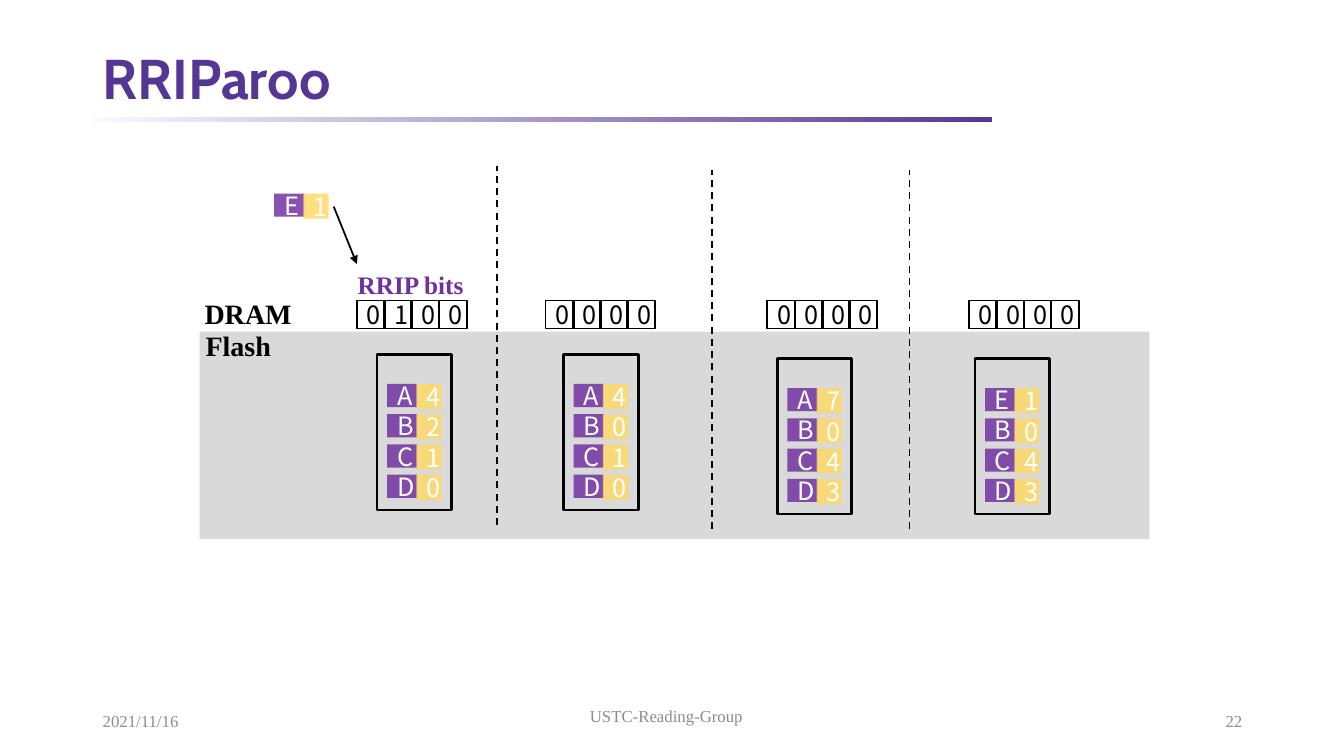
from lxml import etree
from pptx import Presentation
from pptx.dml.color import RGBColor
from pptx.enum.dml import MSO_LINE
from pptx.enum.shapes import MSO_CONNECTOR, MSO_SHAPE
from pptx.enum.text import MSO_ANCHOR, PP_ALIGN
from pptx.oxml.ns import qn
from pptx.util import Inches, Pt

RECT = MSO_SHAPE.RECTANGLE
STRAIGHT = MSO_CONNECTOR.STRAIGHT
DASH = MSO_LINE.DASH
LEFT, CENTER, RIGHT = PP_ALIGN.LEFT, PP_ALIGN.CENTER, PP_ALIGN.RIGHT
TOP, MIDDLE = MSO_ANCHOR.TOP, MSO_ANCHOR.MIDDLE

BLACK = RGBColor(0x00, 0x00, 0x00)
WHITE = RGBColor(0xFF, 0xFF, 0xFF)
GRAY = RGBColor(0x8C, 0x8C, 0x8C)
SILVER = RGBColor(0xD9, 0xD9, 0xD9)
PURPLE = RGBColor(0x70, 0x30, 0xA0)
YELLOW = RGBColor(0xFF, 0xD9, 0x66)
INDIGO = RGBColor(0x54, 0x37, 0x95)
PALE = RGBColor(0xF7, 0xFA, 0xFD)

SERIF = "Times New Roman"
SANS = "Noto Sans CJK SC"
HEAD = "Cabin"


def write(frame, text, font=SERIF, size=18, color=BLACK, bold=False,
          align=LEFT, anchor=TOP, wrap=True, spacing=None):
    frame.word_wrap = wrap
    frame.vertical_anchor = anchor
    para = frame.paragraphs[0]
    para.alignment = align
    para.line_spacing = spacing
    run = para.add_run()
    run.text = text
    run.font.name = font
    run.font.size = Pt(size)
    run.font.bold = bold
    run.font.color.rgb = color


class Board:
    thin, thick = 1.25, 2
    pitch, row = 0.27, 0.3

    def __init__(self, slide):
        self.shapes = slide.shapes

    def label(self, text, x, y, w, h, **style):
        box = self.shapes.add_textbox(Inches(x), Inches(y), Inches(w), Inches(h))
        write(box.text_frame, text, **style)

    def rect(self, x, y, w, h, fill=None, alpha=None, line=None):
        box = self.shapes.add_shape(RECT, Inches(x), Inches(y), Inches(w), Inches(h))
        box.shadow.inherit = False
        if fill is None:
            box.fill.background()
        else:
            box.fill.solid()
            box.fill.fore_color.rgb = fill
        if alpha:
            color = box.fill._xPr.find(qn("a:solidFill"))[0]
            etree.SubElement(color, qn("a:alpha"), val=str(alpha * 1000))
        if line:
            box.line.color.rgb = BLACK
            box.line.width = Pt(line)
        else:
            box.line.fill.background()
        return box

    def rule(self, x, y, w, h):
        bar = self.rect(x, y, w, h)
        bar.fill.gradient()
        bar.fill.gradient_angle = 0
        for stop, color in zip(bar.fill.gradient_stops, (PALE, INDIGO)):
            stop.color.rgb = color

    def cell(self, text, x, y, w, h, color=WHITE, **style):
        box = self.rect(x, y, w, h, **style)
        write(box.text_frame, text, font=SANS, color=color, align=CENTER, anchor=MIDDLE)

    def item(self, key, value, x, y):
        self.cell(key, x, y, 0.3, 0.23, fill=PURPLE, alpha=83)
        self.cell(value, x + 0.29, y, 0.25, 0.25, fill=YELLOW, alpha=83)

    def bits(self, text, x, y):
        for i, bit in enumerate(text):
            self.cell(bit, x + i * self.pitch, y, 0.28, 0.28, color=BLACK, line=self.thin)

    def page(self, items, x, y):
        self.rect(x, y, 0.74, 1.54, line=self.thick)
        for i, (key, value) in enumerate(items):
            self.item(key, value, x + 0.1, y + 0.29 + i * self.row)

    def link(self, x1, y1, x2, y2, dash=None, arrow=False):
        line = self.shapes.add_connector(
            STRAIGHT, Inches(x1), Inches(y1), Inches(x2), Inches(y2))
        line.line.color.rgb = BLACK
        line.line.width = Pt(self.thin)
        if dash:
            line.line.dash_style = dash
        if arrow:
            etree.SubElement(line.line._get_or_add_ln(), qn("a:tailEnd"), type="triangle")
        etree.SubElement(line._element.spPr, qn("a:effectLst"))


def main():
    deck = Presentation()
    deck.slide_width, deck.slide_height = Inches(13.33), Inches(7.5)
    board = Board(deck.slides.add_slide(deck.slide_layouts[6]))

    board.rule(0.92, 1.16, 8.92, 0.05)
    board.label("RRIParoo", 0.92, 0.43, 11.5, 0.75, font=HEAD, size=40,
                color=INDIGO, bold=True, anchor=MIDDLE, spacing=0.9)
    for text, x, y, w, align in (
            ("2021/11/16", 0.92, 6.95, 3, LEFT),
            ("USTC-Reading-Group", 4.36, 6.9, 4.5, CENTER),
            ("22", 9.42, 6.95, 3, RIGHT)):
        board.label(text, x, y, w, 0.4, size=12, color=GRAY, align=align, anchor=MIDDLE)

    board.rect(1.98, 3.29, 9.42, 2.06, fill=SILVER)
    board.label("DRAM", 1.93, 2.89, 1.08, 0.44, size=20, bold=True, wrap=False)
    board.label("Flash", 1.94, 3.21, 0.86, 0.44, size=20, bold=True, wrap=False)
    board.label("RRIP bits", 3.45, 2.62, 1.26, 0.4, color=PURPLE, bold=True, wrap=False)

    board.item("E", "1", 2.72, 1.92)
    board.link(3.31, 2.05, 3.54, 2.62, arrow=True)

    for flags, left, keys, values, x, y in (
            ("0100", 3.54, "ABCD", "4210", 3.74, 3.52),
            ("0000", 5.41, "ABCD", "4010", 5.59, 3.52),
            ("0000", 7.61, "ABCD", "7043", 7.71, 3.56),
            ("0000", 9.61, "EBCD", "1043", 9.67, 3.56)):
        board.bits(flags, left, 2.98)
        board.page(zip(keys, values), x, y)

    for x, y in ((4.93, 1.65), (7.06, 1.69), (9.02, 1.69)):
        board.link(x, y + 3.56, x, y, dash=DASH)

    deck.save("out.pptx")


if __name__ == "__main__":
    main()
